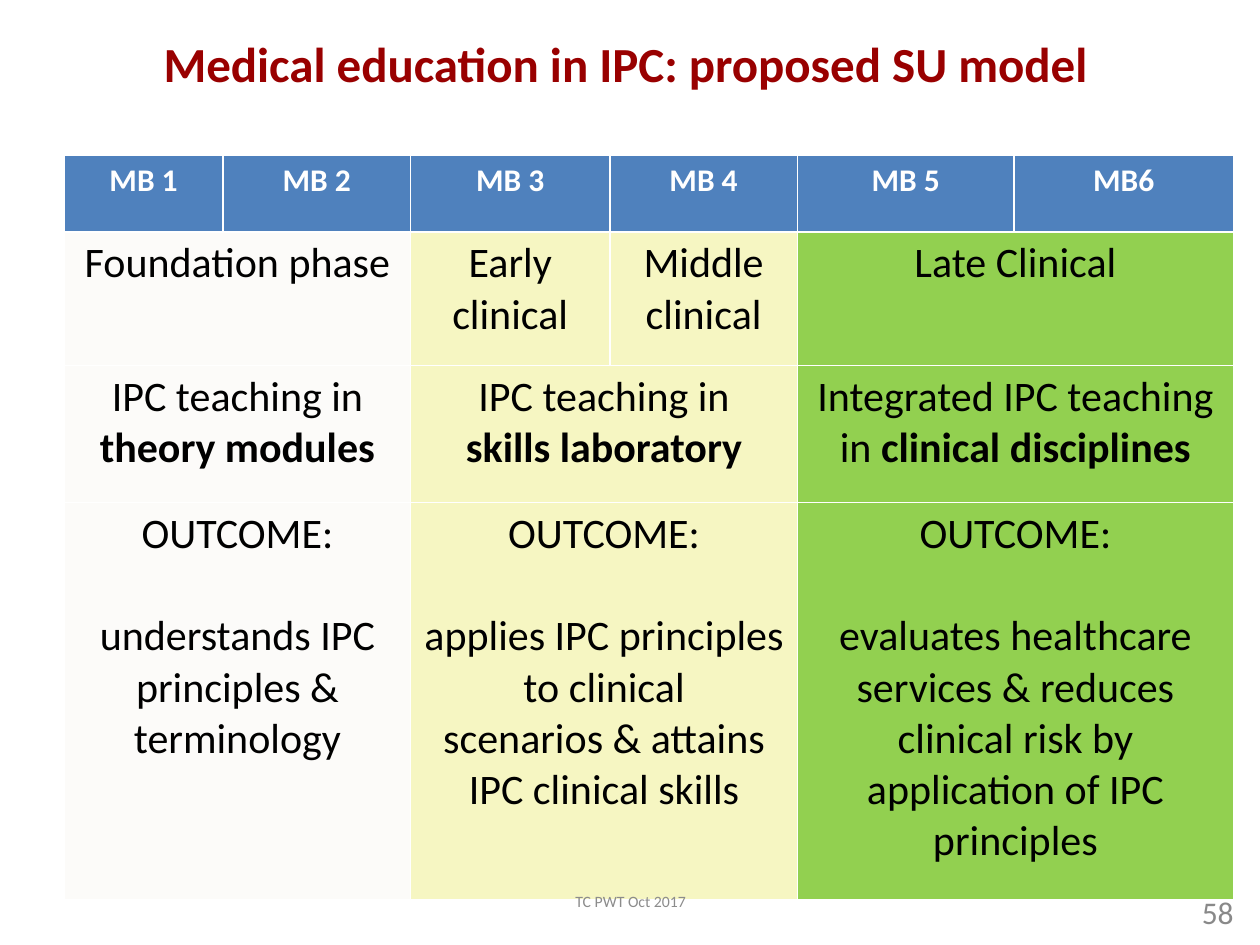
from dataclasses import dataclass

from pptx import Presentation
from pptx.dml.color import RGBColor
from pptx.enum.text import MSO_ANCHOR, PP_ALIGN
from pptx.util import Inches, Pt


@dataclass(frozen=True)
class Theme:
    font: str = "Calibri"
    title: str = "990000"
    header: str = "4F81BD"
    header_text: str = "FFFFFF"
    text: str = "000000"
    foundation: str = "FCFBF9"
    clinical: str = "F6F6C2"
    late: str = "92D050"
    footer: str = "8C8C8C"
    number: str = "898989"
    title_size: int = 28
    header_size: int = 18
    body_size: int = 24
    footer_size: int = 9
    number_size: int = 18
    blank_line: int = 29


THEME = Theme()


@dataclass(frozen=True)
class Line:
    text: str
    strong: str = ""
    space_before: int = 0


@dataclass(frozen=True)
class TableCell:
    row: int
    column: int
    span: int
    fill: str
    lines: tuple[Line, ...]


@dataclass(frozen=True)
class Label:
    text: str
    left: float
    top: float
    width: float
    height: float
    size: int
    color: str
    alignment: PP_ALIGN
    anchor: MSO_ANCHOR
    bold: bool = False


def outcome(text: str) -> tuple[Line, ...]:
    return Line("OUTCOME:"), Line(text, space_before=THEME.blank_line)


COLUMN_WIDTHS = (1.26, 1.49, 1.58, 1.49, 1.72, 1.74)
ROW_HEIGHTS = (0.61, 1.06, 1.09, 3.15)
YEARS = ("MB 1", "MB 2", "MB 3", "MB 4", "MB 5", "MB6")

PHASES = (
    TableCell(1, 0, 2, THEME.foundation, (Line("Foundation phase"),)),
    TableCell(1, 2, 1, THEME.clinical, (Line("Early clinical"),)),
    TableCell(1, 3, 1, THEME.clinical, (Line("Middle clinical"),)),
    TableCell(1, 4, 2, THEME.late, (Line("Late Clinical"),)),
)
TEACHING = (
    TableCell(2, 0, 2, THEME.foundation, (Line("IPC teaching in ", "theory modules"),)),
    TableCell(2, 2, 2, THEME.clinical,
              (Line("IPC teaching in"), Line("", "skills laboratory"))),
    TableCell(2, 4, 2, THEME.late,
              (Line("Integrated IPC teaching in ", "clinical disciplines"),)),
)
OUTCOMES = (
    TableCell(3, 0, 2, THEME.foundation,
              outcome("understands IPC principles & terminology")),
    TableCell(3, 2, 2, THEME.clinical,
              outcome("applies IPC principles to clinical\v"
                      "scenarios & attains IPC clinical skills")),
    TableCell(3, 4, 2, THEME.late,
              outcome("evaluates healthcare services & reduces clinical risk "
                      "by application of IPC principles")),
)

LABELS = (
    Label("Medical education in IPC: proposed SU model", 1.2, 0.28, 8.66, 0.5,
          THEME.title_size, THEME.title, PP_ALIGN.LEFT, MSO_ANCHOR.BOTTOM, True),
    Label("TC PWT Oct 2017", 3.42, 6.95, 3.17, 0.4,
          THEME.footer_size, THEME.footer, PP_ALIGN.CENTER, MSO_ANCHOR.MIDDLE),
    Label("58", 7.56, 7.04, 2.33, 0.4,
          THEME.number_size, THEME.number, PP_ALIGN.RIGHT, MSO_ANCHOR.MIDDLE),
)


def style_font(font, size: int, color: str, bold: bool) -> None:
    font.name = THEME.font
    font.size = Pt(size)
    font.bold = bold
    font.color.rgb = RGBColor.from_string(color)


def fill_cell(cell, color: str) -> None:
    cell.fill.solid()
    cell.fill.fore_color.rgb = RGBColor.from_string(color)


def add_label(slide, label: Label) -> None:
    shape = slide.shapes.add_textbox(Inches(label.left), Inches(label.top),
                                     Inches(label.width), Inches(label.height))
    text_frame = shape.text_frame
    text_frame.word_wrap = True
    text_frame.vertical_anchor = label.anchor
    text_frame.text = label.text
    paragraph = text_frame.paragraphs[0]
    paragraph.alignment = label.alignment
    style_font(paragraph.runs[0].font, label.size, label.color, label.bold)


def write_line(paragraph, line: Line) -> None:
    paragraph.alignment = PP_ALIGN.CENTER
    if line.space_before:
        paragraph.space_before = Pt(line.space_before)
    paragraph.text = line.text
    for run in paragraph.runs:
        style_font(run.font, THEME.body_size, THEME.text, False)
    if line.strong:
        run = paragraph.add_run()
        run.text = line.strong
        style_font(run.font, THEME.body_size, THEME.text, True)


def draw_cell(table, item: TableCell) -> None:
    cell = table.cell(item.row, item.column)
    last = item.column + item.span - 1
    if item.span > 1:
        cell.merge(table.cell(item.row, last))
    for column in range(item.column, last + 1):
        fill_cell(table.cell(item.row, column), item.fill)
    text_frame = cell.text_frame
    for index, line in enumerate(item.lines):
        paragraph = text_frame.add_paragraph() if index else text_frame.paragraphs[0]
        write_line(paragraph, line)


def add_curriculum(slide) -> None:
    frame = slide.shapes.add_table(
        len(ROW_HEIGHTS), len(COLUMN_WIDTHS), Inches(0.51), Inches(1.23),
        Inches(sum(COLUMN_WIDTHS)), Inches(sum(ROW_HEIGHTS)))
    table = frame.table
    table.horz_banding = False
    for column, width in zip(table.columns, COLUMN_WIDTHS):
        column.width = Inches(width)
    for row, height in zip(table.rows, ROW_HEIGHTS):
        row.height = Inches(height)
    for index, year in enumerate(YEARS):
        cell = table.cell(0, index)
        fill_cell(cell, THEME.header)
        cell.text_frame.text = year
        paragraph = cell.text_frame.paragraphs[0]
        paragraph.alignment = PP_ALIGN.CENTER
        style_font(paragraph.runs[0].font, THEME.header_size, THEME.header_text, True)
    for item in PHASES + TEACHING + OUTCOMES:
        draw_cell(table, item)


def main() -> None:
    presentation = Presentation()
    presentation.slide_width = Inches(10)
    presentation.slide_height = Inches(7.5)
    slide = presentation.slides.add_slide(presentation.slide_layouts[6])
    add_curriculum(slide)
    for label in LABELS:
        add_label(slide, label)
    presentation.save("out.pptx")


if __name__ == "__main__":
    main()
